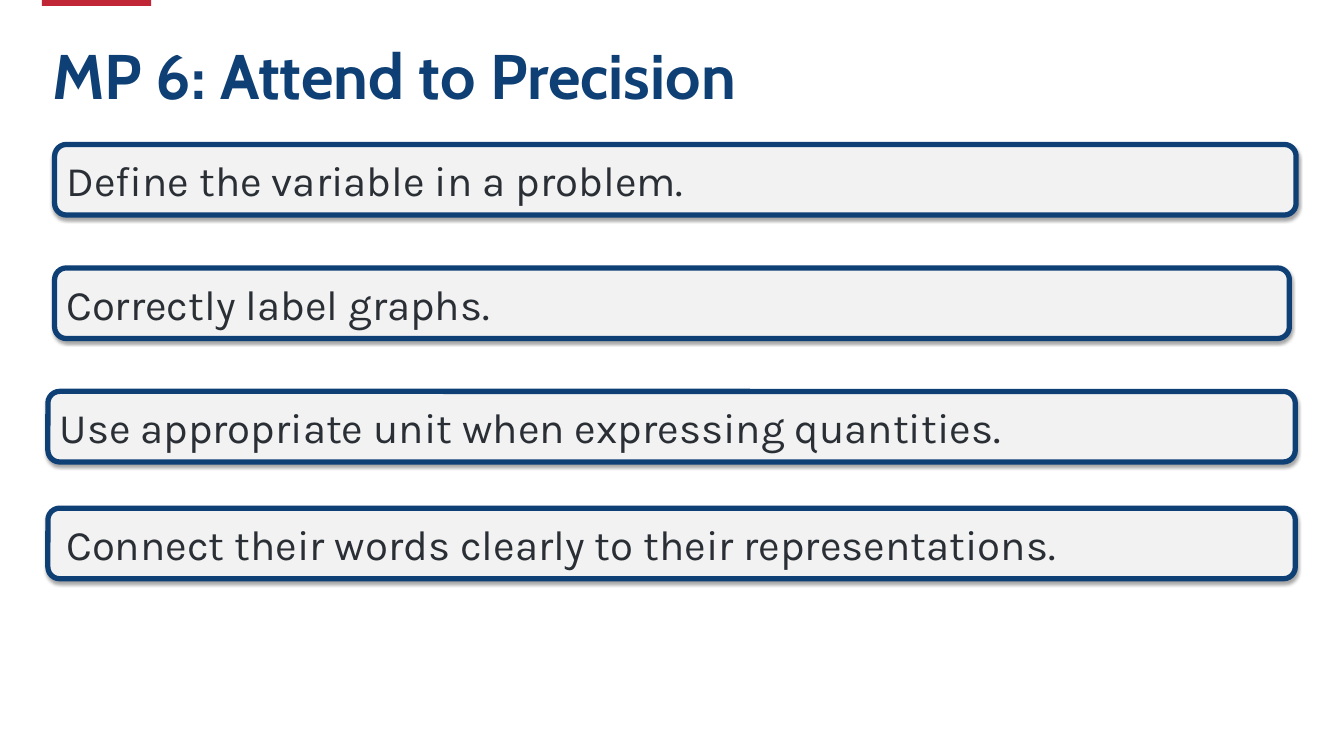
import pptx
import pptx.util
import pptx.dml.color
import pptx.enum.shapes
import pptx.enum.text
import pptx.oxml
import pptx.oxml.ns

Inches, Pt = pptx.util.Inches, pptx.util.Pt
Shape = pptx.enum.shapes.MSO_SHAPE
Anchor = pptx.enum.text.MSO_ANCHOR
Align = pptx.enum.text.PP_ALIGN

NAVY, RED, GREY, INK = "0E3F75", "C12637", "F2F2F2", "2A2F36"

# Left, top, width, text indent, wording
POINTS = [
    (0.65, 1.72, 14.78, 0, "Define the variable in a problem."),
    (0.65, 3.19, 14.7, 0, "Correctly label graphs."),
    (0.57, 4.66, 14.85, 0, "Use appropriate unit when expressing quantities."),
    (0.57, 6.05, 14.85, 0.08,
     "Connect their words clearly to their representations."),
]

SHADOW = (
    '<a:outerShdw %s blurRad="40000" dist="23000" dir="5400000" rotWithShape="0">'
    '<a:srgbClr val="000000"><a:alpha val="35000"/></a:srgbClr></a:outerShdw>'
    % pptx.oxml.ns.nsdecls("a")
)


def color(code):
    return pptx.dml.color.RGBColor.from_string(code)


def style(para, face, size, code, bold=False):
    para.alignment = Align.LEFT
    font = para.font
    font.name, font.size, font.bold = face, Pt(size), bold
    font.color.rgb = color(code)


def add_bar(slide):
    bar = slide.shapes.add_shape(
        Shape.RECTANGLE, Inches(0.5), 0, Inches(1.3), Inches(0.07))
    bar.shadow.inherit = False
    bar.fill.solid()
    bar.fill.fore_color.rgb = color(RED)
    bar.line.fill.background()


def set_title(slide, text):
    title = slide.shapes.title
    title.left, title.top = Inches(0.5), Inches(0.48)
    title.width, title.height = Inches(15), Inches(1.74)
    frame = title.text_frame
    frame.text = text
    frame.word_wrap = True
    frame.auto_size = pptx.enum.text.MSO_AUTO_SIZE.NONE
    frame.vertical_anchor = Anchor.TOP
    frame.margin_left = frame.margin_right = Inches(0.12)
    frame.margin_top = frame.margin_bottom = Inches(0.06)
    para = frame.paragraphs[0]
    para.line_spacing = 0.9
    style(para, "Cabin", 54, NAVY, True)


def add_point(slide, left, top, width, indent, text):
    box = slide.shapes.add_shape(
        Shape.ROUNDED_RECTANGLE,
        Inches(left), Inches(top), Inches(width), Inches(0.84))
    box.fill.solid()
    box.fill.fore_color.rgb = color(GREY)
    box.line.color.rgb = color(NAVY)
    box.line.width = Pt(4.5)

    # Soft shadow below the box
    box.shadow.inherit = False
    effects = box._element.spPr.find(pptx.oxml.ns.qn("a:effectLst"))
    effects.append(pptx.oxml.parse_xml(SHADOW))

    frame = box.text_frame
    frame.text = text
    frame.word_wrap = True
    frame.vertical_anchor = Anchor.MIDDLE
    para = frame.paragraphs[0]
    if indent:
        para._p.get_or_add_pPr().set("marL", str(Inches(indent)))
    style(para, "Karla", 36, INK)


def main():
    deck = pptx.Presentation()
    deck.slide_width, deck.slide_height = Inches(16), Inches(9)
    slide = deck.slides.add_slide(deck.slide_layouts[5])
    add_bar(slide)
    set_title(slide, "MP 6: Attend to Precision")
    for point in POINTS:
        add_point(slide, *point)
    deck.save("out.pptx")


if __name__ == "__main__":
    main()
